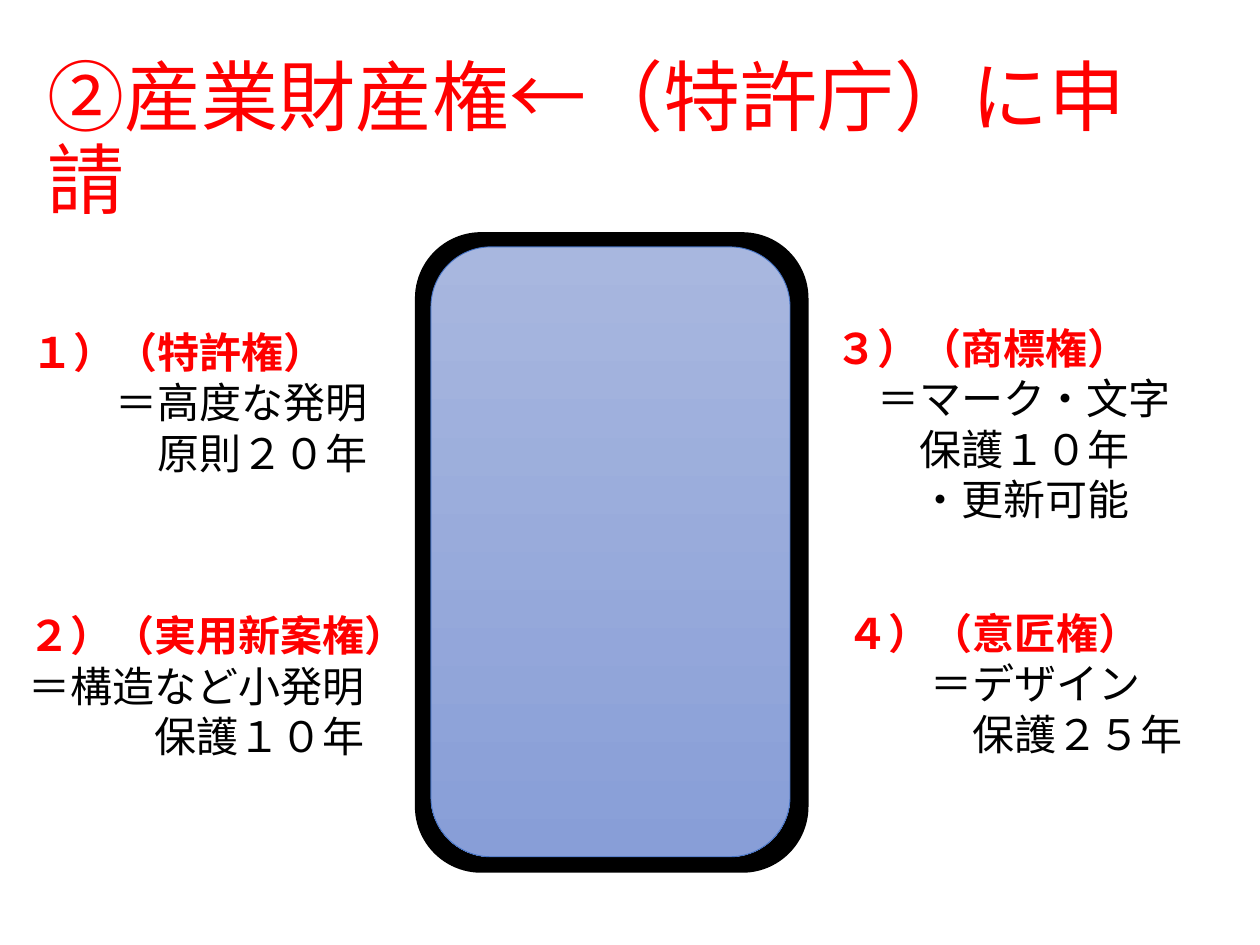
from pptx import Presentation
from pptx import util as u
from pptx.dml.color import RGBColor
from pptx.enum import shapes, text

COLORS = {
    "accent": "FF0000",
    "body": "000000",
    "paper": "FFFFFF",
    "case": "000000",
    "screen_top": "A8B7DF",
    "screen_bottom": "889ED7",
    "screen_edge": "4472C4",
}
FONT = "Calibri"
EM = u.Pt(24)  # one full-width character of the body text

TITLE = "②産業財産権←（特許庁）に申請"
TITLE_BOX = (0.28, 0.4, 9.36, 1.45)
PHONE_BOX = (3.3, 1.85, 3.11, 5.07)

# box, heading, then (indent in characters, detail)
RIGHTS = [
    ((0.15, 2.54, 3.11, 1.31), "１）（特許権）",
     [(2, "＝高度な発明"), (3, "原則２０年")]),
    ((6.62, 4.77, 3.11, 1.72), "４）（意匠権）",
     [(2, "＝デザイン"), (3, "保護２５年")]),
    ((6.53, 2.51, 3.11, 2.12), "３）（商標権）",
     [(1, "＝マーク・文字"), (2, "保護１０年"), (2, "・更新可能")]),
    ((0.13, 4.79, 3.32, 1.72), "２）（実用新案権）",
     [(0, "＝構造など小発明"), (3, "保護１０年")]),
]


def rgb(name):
    return RGBColor.from_string(COLORS[name])


def inches(box):
    return [u.Inches(length) for length in box]


def apply_format(target, values):
    for name, value in values.items():
        setattr(target, name, value)


def write_line(paragraph, wording, color, size, bold=False, indent=0):
    run = paragraph.add_run()
    run.text = wording
    apply_format(run.font, {"name": FONT, "size": u.Pt(size), "bold": bold})
    run.font.color.rgb = rgb(color)
    if indent:
        properties = paragraph._p.get_or_add_pPr()
        properties.set("marL", str(indent * EM))
        properties.set("indent", "0")


def add_title(slide, box):
    frame = slide.shapes.add_textbox(*inches(box)).text_frame
    apply_format(frame, {
        "word_wrap": True,
        "vertical_anchor": text.MSO_ANCHOR.MIDDLE,
    })
    heading = frame.paragraphs[0]
    heading.line_spacing = 0.9
    write_line(heading, TITLE, "accent", 44)


def add_right(slide, box, heading, details):
    """Place one kind of right: a red heading above its indented details."""
    card = slide.shapes.add_textbox(*inches(box))
    card.fill.solid()
    card.fill.fore_color.rgb = rgb("paper")
    frame = card.text_frame
    apply_format(frame, {
        "word_wrap": True,
        "auto_size": text.MSO_AUTO_SIZE.SHAPE_TO_FIT_TEXT,
    })
    write_line(frame.paragraphs[0], heading, "accent", 24, bold=True)
    for indent, detail in details:
        write_line(frame.add_paragraph(), detail, "body", 24, indent=indent)


def add_rounded(group, box, edge, edge_width):
    panel = group.shapes.add_shape(
        shapes.MSO_SHAPE.ROUNDED_RECTANGLE, *inches(box))
    panel.shadow.inherit = False
    panel.line.color.rgb = rgb(edge)
    panel.line.width = u.Pt(edge_width)
    return panel


def add_phone(slide, box):
    left, top, width, height = box
    phone = slide.shapes.add_group_shape()

    case = add_rounded(phone, box, "case", 1)
    case.fill.solid()
    case.fill.fore_color.rgb = rgb("case")

    screen_box = (left + 0.12, top + 0.11, width - 0.26, height - 0.23)
    screen = add_rounded(phone, screen_box, "screen_edge", 0.5)
    screen.fill.gradient()
    screen.fill.gradient_angle = 270
    for stop, color in zip(screen.fill.gradient_stops,
                           ("screen_top", "screen_bottom")):
        stop.color.rgb = rgb(color)


def main():
    deck = Presentation()
    apply_format(deck, {
        "slide_width": u.Inches(10),
        "slide_height": u.Inches(7.5),
    })
    slide = deck.slides.add_slide(deck.slide_layouts[6])
    add_title(slide, TITLE_BOX)
    for box, heading, details in RIGHTS:
        add_right(slide, box, heading, details)
    add_phone(slide, PHONE_BOX)
    deck.save("out.pptx")


if __name__ == "__main__":
    main()
